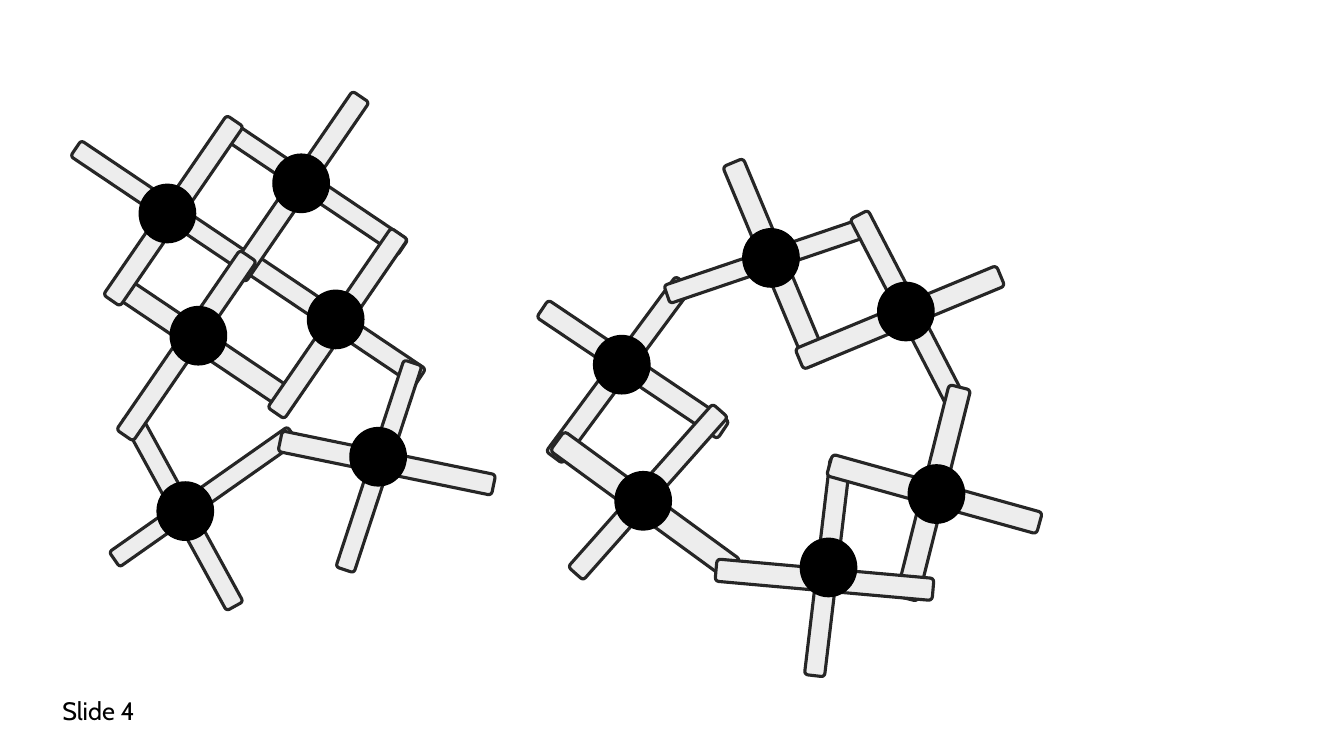
"""Build a slide with two clusters of four-armed nodes: an open lattice and a ring."""
from pptx import Presentation
from pptx.dml.color import RGBColor
from pptx.enum.shapes import MSO_SHAPE
from pptx.enum.text import MSO_AUTO_SIZE
from pptx.util import Cm, Pt

CAPTION = "Slide 4"

# centre x, centre y, thickness, rotation
RING_BARS = [
    (15.95, 9.31, 0.53, 33.9), (16.33, 12.4, 0.51, 311.6),
    (15.6, 9.32, 0.51, 306.5), (16.26, 12.73, 0.61, 36.1),
    (19.41, 6.54, 0.48, 341.3), (19.53, 6.63, 0.56, 67.3),
    (22.91, 7.85, 0.51, 62.6), (22.68, 8.0, 0.56, 337.5),
    (23.52, 12.42, 0.56, 104.1), (20.85, 14.3, 0.51, 96.8),
    (20.78, 14.61, 0.56, 5.1), (23.55, 12.45, 0.56, 15.5),
]
LATTICE_BARS = [
    (4.19, 5.27, 0.48, 33.9), (8.31, 7.98, 0.51, 33.9),
    (5.13, 8.64, 0.56, 33.9), (7.87, 4.71, 0.48, 33.9),
    (4.6, 12.87, 0.48, 61.3), (7.54, 4.7, 0.51, 304.5),
    (4.37, 5.31, 0.51, 304.5), (8.51, 8.15, 0.51, 304.5),
    (9.55, 11.75, 0.48, 288.2), (5.13, 12.52, 0.46, 324.9),
    (9.75, 11.67, 0.53, 11.6), (4.7, 8.71, 0.51, 304.5),
]
RING_NODES = [
    (19.43, 6.5), (15.67, 9.19), (16.21, 12.62),
    (22.83, 7.85), (23.6, 12.45), (20.88, 14.3),
]
LATTICE_NODES = [
    (4.67, 12.88), (7.59, 4.62), (9.53, 11.51),
    (8.46, 8.05), (4.22, 5.38), (5.0, 8.46),
]

BAR_LENGTH = 5.49
NODE_WIDTH, NODE_HEIGHT = 1.42, 1.47
BLACK = RGBColor(0x00, 0x00, 0x00)
BAR_FILL = RGBColor(0xED, 0xED, 0xED)
BAR_EDGE = RGBColor(0x26, 0x26, 0x26)


def add_centred(slide, kind, x, y, width, height, fill, edge, edge_width):
    """Add a filled, outlined shape around a centre point given in centimetres."""
    part = slide.shapes.add_shape(
        kind, Cm(x - width / 2), Cm(y - height / 2), Cm(width), Cm(height))
    part.shadow.inherit = False
    part.fill.solid()
    part.fill.fore_color.rgb = fill
    part.line.color.rgb = edge
    part.line.width = Pt(edge_width)
    return part


def main():
    """Draw the bars, the nodes over them, and the caption."""
    deck = Presentation()
    deck.slide_width, deck.slide_height = Cm(33.87), Cm(19.05)
    slide = deck.slides.add_slide(deck.slide_layouts[6])

    for x, y, thickness, angle in RING_BARS + LATTICE_BARS:
        bar = add_centred(slide, MSO_SHAPE.ROUNDED_RECTANGLE, x, y,
                          BAR_LENGTH, thickness, BAR_FILL, BAR_EDGE, 2.25)
        bar.rotation = angle

    for x, y in RING_NODES + LATTICE_NODES:
        add_centred(slide, MSO_SHAPE.OVAL, x, y,
                    NODE_WIDTH, NODE_HEIGHT, BLACK, BLACK, 1)

    caption = slide.shapes.add_textbox(Cm(1.32), Cm(17.4), Cm(4.45), Cm(1.02))
    caption.text_frame.word_wrap = True
    caption.text_frame.auto_size = MSO_AUTO_SIZE.SHAPE_TO_FIT_TEXT
    caption.text_frame.text = CAPTION
    font = caption.text_frame.paragraphs[0].runs[0].font
    font.name, font.size = "Cabin", Pt(18)
    font.color.rgb = BLACK

    deck.save("out.pptx")


if __name__ == "__main__":
    main()
